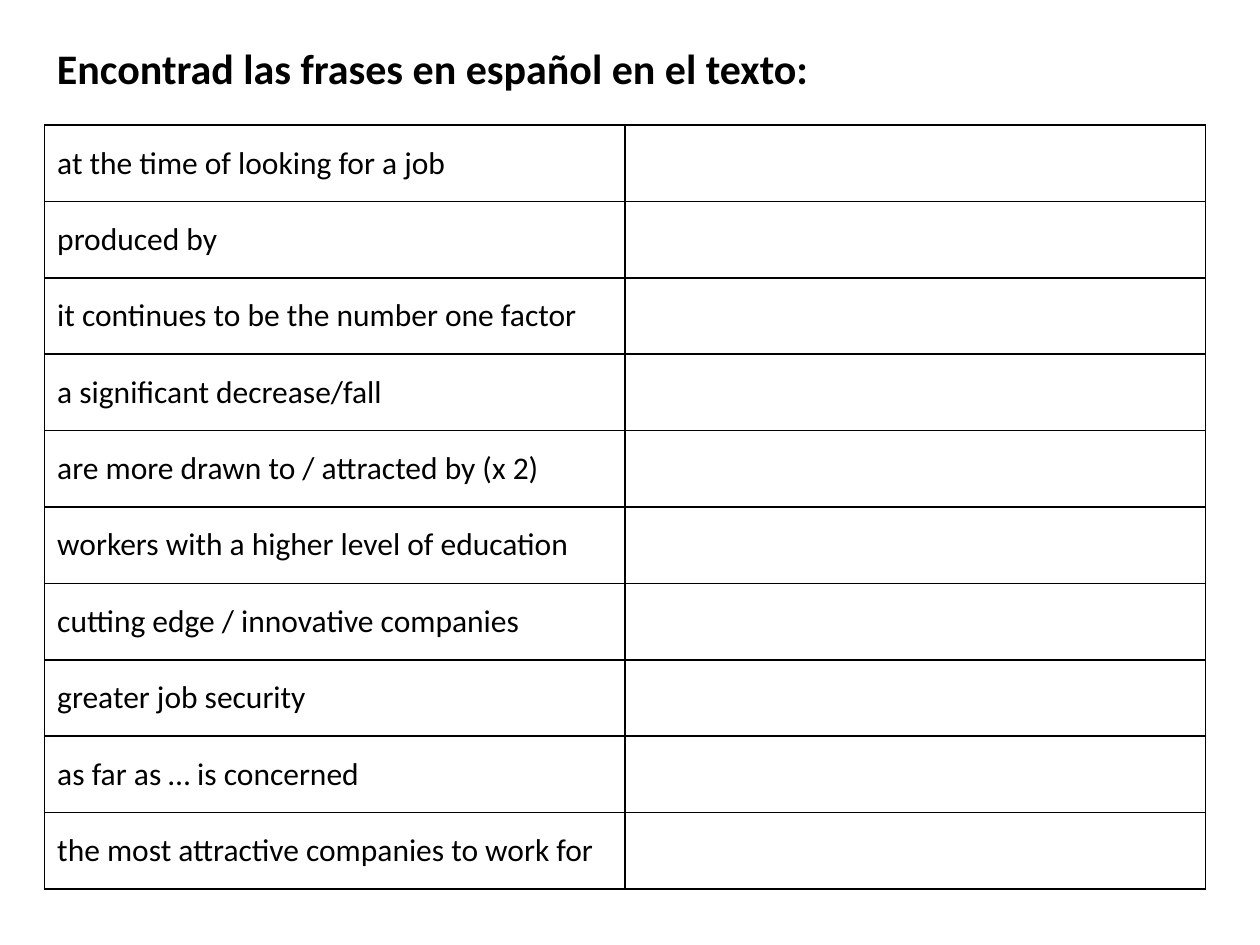
from lxml import etree
from pptx import Presentation
from pptx.dml.color import RGBColor
from pptx.enum.text import MSO_ANCHOR, MSO_AUTO_SIZE
from pptx.oxml.ns import qn
from pptx.util import Cm, Pt

MIDDLE = MSO_ANCHOR.MIDDLE
FIT_SHAPE = MSO_AUTO_SIZE.SHAPE_TO_FIT_TEXT
FONT = "Calibri"
BLACK = "000000"
BORDER_SIDES = ("a:lnL", "a:lnR", "a:lnT", "a:lnB")

TITLE = "Encontrad las frases en español en el texto:"
PHRASES = [
    "at the time of looking for a job",
    "produced by",
    "it continues to be the number one factor",
    "a significant decrease/fall",
    "are more drawn to / attracted by (x 2)",
    "workers with a higher level of education",
    "cutting edge / innovative companies",
    "greater job security",
    "as far as … is concerned",
    "the most attractive companies to work for",
]


def color(hex_string):
    return RGBColor.from_string(hex_string)


def format_text(text_frame, size, bold=False):
    for paragraph in text_frame.paragraphs:
        # Empty answer cells keep the same font for later typing
        fonts = [run.font for run in paragraph.runs] or [paragraph.font]
        for font in fonts:
            font.name = FONT
            font.size = Pt(size)
            font.bold = bold
            font.color.rgb = color(BLACK)


def add_borders(cell, width):
    """Draw a solid line on all four sides of a cell."""
    properties = cell._tc.get_or_add_tcPr()
    for position, side in enumerate(BORDER_SIDES):
        line = etree.Element(qn(side), w=str(Pt(width)))
        fill = etree.SubElement(line, qn("a:solidFill"))
        etree.SubElement(fill, qn("a:srgbClr"), val=BLACK)
        properties.insert(position, line)


def add_title(slide, left, top, width, height):
    shape = slide.shapes.add_textbox(left, top, width, height)
    text_frame = shape.text_frame
    text_frame.word_wrap = True
    text_frame.auto_size = FIT_SHAPE
    text_frame.text = TITLE
    format_text(text_frame, 24, bold=True)


def add_phrase_table(slide, left, top, width, height):
    """Phrases on the left, empty answer cells on the right."""
    row_count = len(PHRASES)
    table = slide.shapes.add_table(row_count, 2, left, top, width, height).table
    table.first_row = False
    table.horz_banding = False
    for row, phrase in zip(table.rows, PHRASES):
        row.height = height // row_count
        row.cells[0].text = phrase
        for cell in row.cells:
            cell.vertical_anchor = MIDDLE
            cell.fill.background()
            add_borders(cell, 1)
            format_text(cell.text_frame, 18)


def main():
    presentation = Presentation()
    presentation.slide_width = Cm(25.4)
    presentation.slide_height = Cm(19.05)
    slide = presentation.slides.add_slide(presentation.slide_layouts[6])

    left = Cm(0.9)
    add_phrase_table(slide, left, Cm(2.52), Cm(23.4), Cm(15.4))
    add_title(slide, left, Cm(0.74), Cm(23.2), Cm(1.28))

    presentation.save("out.pptx")


if __name__ == "__main__":
    main()
